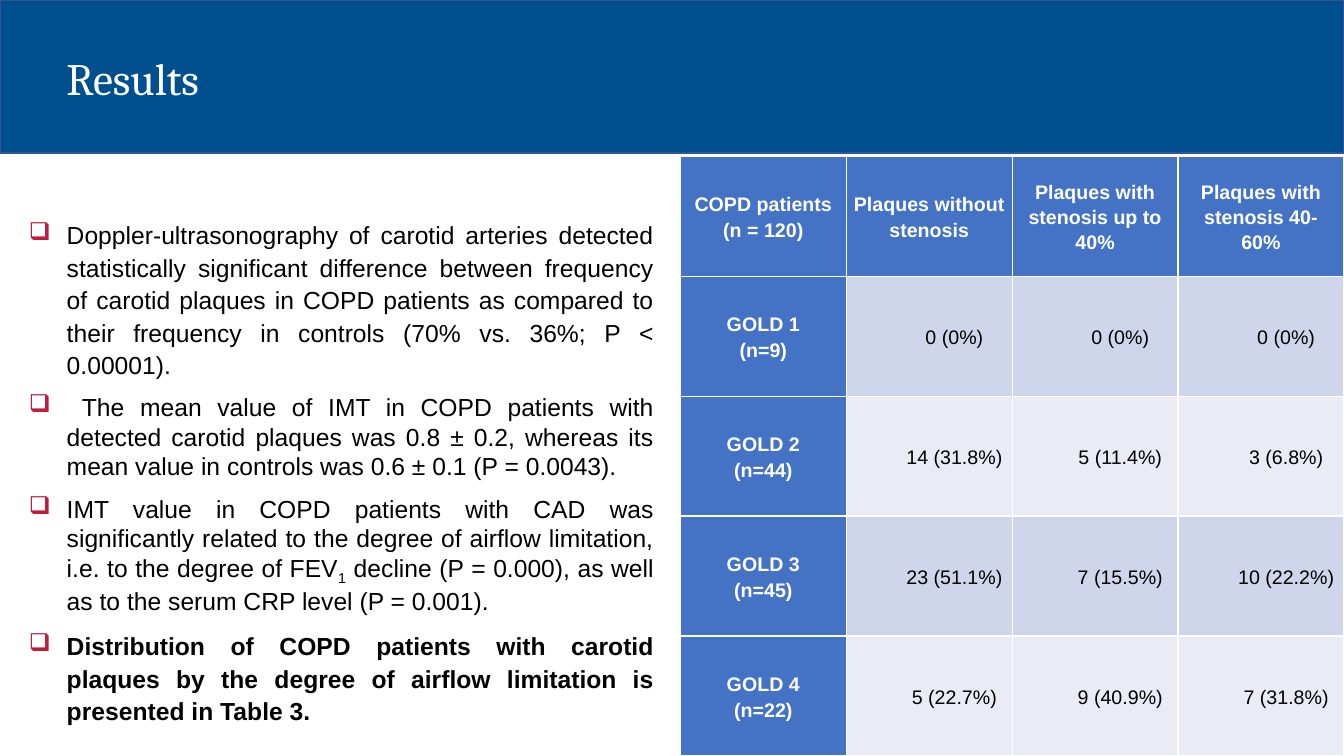
import pptx
import pptx.dml.color
import pptx.enum.shapes
import pptx.enum.text
import pptx.oxml
import pptx.oxml.ns
import pptx.util

Pt = pptx.util.Pt
ALIGN = pptx.enum.text.PP_ALIGN
MIDDLE = pptx.enum.text.MSO_ANCHOR.MIDDLE
SLIDE_WIDTH, SLIDE_HEIGHT = 960, 540
BANNER_HEIGHT = 109.4

# Each finding: line spacing, bold, then runs with subscripts at odd positions
FINDINGS = [
    (1.1, False, ["Doppler-ultrasonography of carotid arteries detected statistically "
                  "significant difference between frequency of carotid plaques in COPD "
                  "patients as compared to their frequency in controls "
                  "(70% vs. 36%; P < 0.00001)."]),
    (1.0, False, [" The mean value of IMT in COPD patients with detected carotid plaques "
                  "was 0.8 ± 0.2, whereas its mean value in controls was "
                  "0.6 ± 0.1 (P = 0.0043)."]),
    (1.0, False, ["IMT value in COPD patients with CAD was significantly related to the "
                  "degree of airflow limitation, i.e. to the degree of FEV", "1",
                  " decline (P = 0.000), as well as to the serum CRP level (P = 0.001)."]),
    (1.1, True, ["Distribution of COPD patients with carotid plaques by the degree of "
                 "airflow limitation is presented in Table 3."]),
]
PLAQUES = [
    ["COPD patients\n(n = 120)", "Plaques without stenosis",
     "Plaques with stenosis up to 40%", "Plaques with stenosis 40-60%"],
    ["GOLD 1\n(n=9)", "0 (0%)", "0 (0%)", "0 (0%)"],
    ["GOLD 2\n(n=44)", "14 (31.8%)", "5 (11.4%)", "3 (6.8%)"],
    ["GOLD 3\n(n=45)", "23 (51.1%)", "7 (15.5%)", "10 (22.2%)"],
    ["GOLD 4\n(n=22)", "5 (22.7%)", "9 (40.9%)", "7 (31.8%)"],
]


def color(hex_code):
    return pptx.dml.color.RGBColor.from_string(hex_code)


def style(font, name, size, hex_code, bold=False):
    font.name, font.size, font.bold = name, Pt(size), bold
    font.color.rgb = color(hex_code)


def add_bullet(paragraph, char, hex_code, indent):
    """Give the paragraph a coloured bullet with a hanging indent."""
    properties = paragraph._p.get_or_add_pPr()
    properties.set("marL", str(Pt(indent)))
    properties.set("indent", str(-Pt(indent)))
    namespace = pptx.oxml.ns.nsdecls("a")
    for xml in (f'<a:buClr {namespace}><a:srgbClr val="{hex_code}"/></a:buClr>',
                f'<a:buChar {namespace} char="{char}"/>'):
        properties.append(pptx.oxml.parse_xml(xml))


def build_banner(slide, left, top, width, height):
    banner = slide.shapes.add_shape(pptx.enum.shapes.MSO_SHAPE.RECTANGLE,
                                    Pt(left), Pt(top), Pt(width), Pt(height))
    banner.shadow.inherit = False
    banner.fill.solid()
    banner.fill.fore_color.rgb = color("004F8E")
    banner.line.color.rgb = color("325491")
    banner.line.width = Pt(1)

    title = slide.shapes.add_textbox(Pt(left + 40.3), Pt(top + 30.2), Pt(574), Pt(54.7))
    frame = title.text_frame
    frame.word_wrap = True
    frame.vertical_anchor = MIDDLE
    frame.text = "Results"
    frame.paragraphs[0].line_spacing = 0.9
    style(frame.paragraphs[0].runs[0].font, "Cambria", 32, "FFFFFF")


def build_findings(slide, left, top, width, height):
    findings = slide.shapes.add_textbox(Pt(left), Pt(top), Pt(width), Pt(height))
    frame = findings.text_frame
    frame.word_wrap = True
    frame.margin_top = frame.margin_bottom = 0
    for index, (spacing, bold, parts) in enumerate(FINDINGS):
        paragraph = frame.add_paragraph() if index else frame.paragraphs[0]
        add_bullet(paragraph, "❑", "BD1D3D", 27)
        paragraph.alignment = ALIGN.JUSTIFY
        paragraph.line_spacing = spacing
        if index:
            paragraph.space_before = Pt(9)
        for position, part in enumerate(parts):
            run = paragraph.add_run()
            run.text = part
            style(run.font, "Arial", 17.6, "000000", bold)
            if position % 2:
                run.font._element.set("baseline", "-25000")


def build_plaque_table(slide, left, top, width, height):
    table = slide.shapes.add_table(len(PLAQUES), len(PLAQUES[0]), Pt(left), Pt(top),
                                   Pt(width), Pt(height)).table
    for row, values in enumerate(PLAQUES):
        for column, value in enumerate(values):
            heading = row == 0 or column == 0
            band = "CFD5EA" if row % 2 else "E9EBF5"
            cell = table.cell(row, column)
            cell.fill.solid()
            cell.fill.fore_color.rgb = color("4472C4" if heading else band)
            cell.vertical_anchor = MIDDLE
            cell.margin_left = cell.margin_right = Pt(5)
            cell.margin_top = cell.margin_bottom = 0
            cell.text_frame.text = value
            for paragraph in cell.text_frame.paragraphs:
                paragraph.alignment = ALIGN.CENTER
                paragraph.line_spacing = 1.15
                if not heading:
                    paragraph._p.get_or_add_pPr().set("marL", str(Pt(36)))
                style(paragraph.runs[0].font, "Arial", 14,
                      "FFFFFF" if heading else "000000", heading)


def main():
    presentation = pptx.Presentation()
    presentation.slide_width = Pt(SLIDE_WIDTH)
    presentation.slide_height = Pt(SLIDE_HEIGHT)
    slide = presentation.slides.add_slide(presentation.slide_layouts[6])
    build_banner(slide, 0, 0, SLIDE_WIDTH, BANNER_HEIGHT)
    build_findings(slide, 13.6, 155, 460.8, 360)
    table_left, table_top = 486, 111.6
    build_plaque_table(slide, table_left, table_top,
                       SLIDE_WIDTH - table_left, SLIDE_HEIGHT - table_top)
    presentation.save("out.pptx")


if __name__ == "__main__":
    main()
